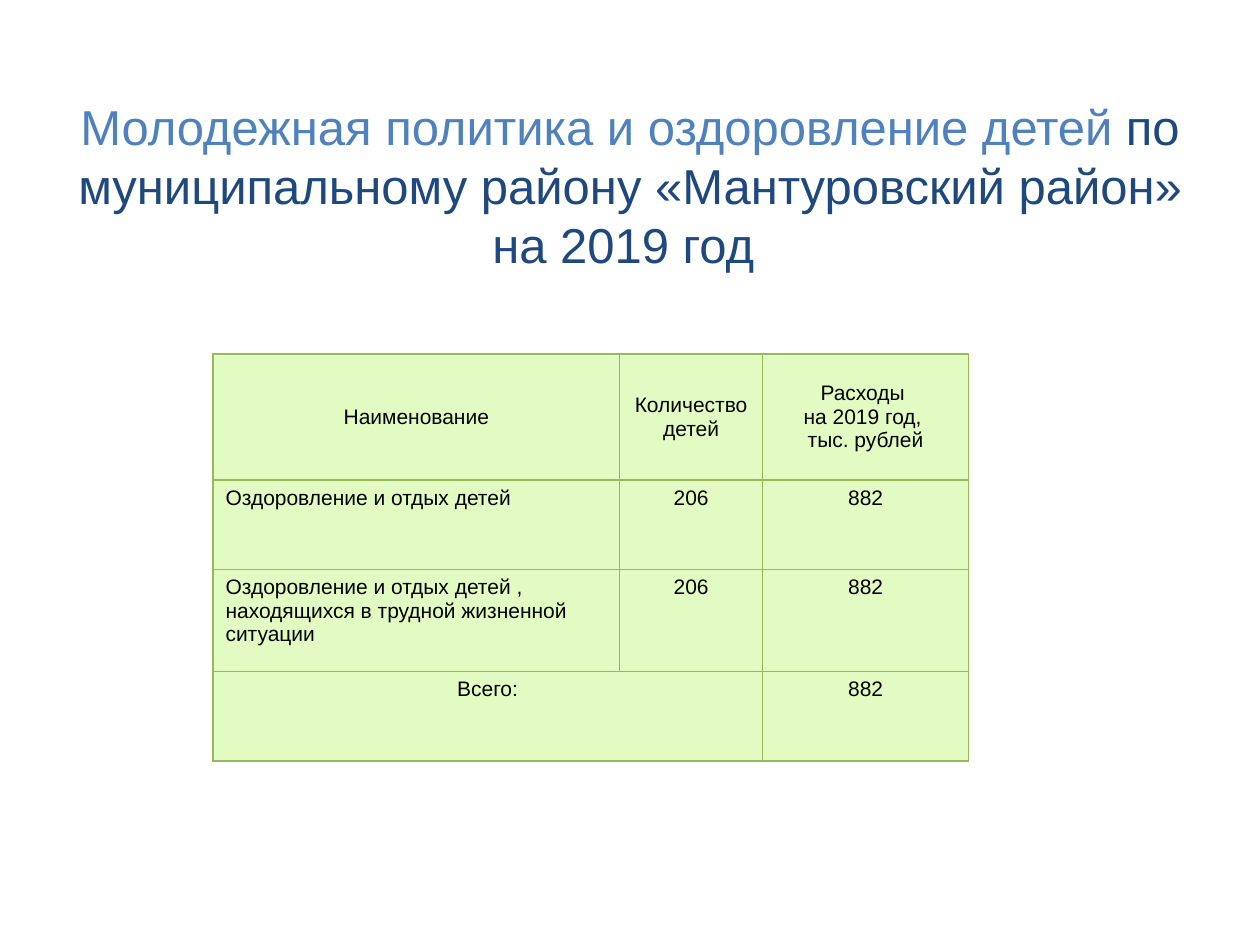
from dataclasses import dataclass

from lxml.etree import SubElement
from pptx import Presentation
from pptx.dml.color import RGBColor as Color
from pptx.enum.text import MSO_ANCHOR as Anchor, MSO_AUTO_SIZE as AutoSize, PP_ALIGN as Align
from pptx.oxml.ns import qn
from pptx.util import Inches, Pt


@dataclass(frozen=True)
class Theme:
    font: str = "Arial"
    title_size: int = 28
    table_size: int = 12
    accent: str = "4F81BD"
    dark: str = "1F497D"
    text: str = "000000"
    cell: str = "E2FBC2"
    border: str = "98B955"
    border_width: float = 0.75


THEME = Theme()

TITLE = [
    ("Молодежная политика и оздоровление детей ", THEME.accent),
    ("по муниципальному району «Мантуровский район» на 2019 год ", THEME.dark),
]
COLUMNS = [3.23, 1.13, 1.64]
ROWS = [1, 0.71, 0.81, 0.71]
# Each cell is a list of paragraphs
CELLS = [
    [["Наименование"], ["Количество детей"], ["Расходы ", "на 2019 год, ", "тыс. рублей"]],
    [["Оздоровление и отдых детей"], ["206"], ["882"]],
    [["Оздоровление и отдых детей , находящихся в трудной жизненной ситуации"], ["206"], ["882"]],
    [["Всего:"], [], ["882"]],
]


def add_span(para, text, size, color):
    span = para.add_run()
    span.text = text
    span.font.name = THEME.font
    span.font.size = Pt(size)
    span.font.color.rgb = Color.from_string(color)


def add_title(page):
    box = page.shapes.title
    box.left, box.top, box.width, box.height = map(Inches, (0.5, 0.84, 9, 1.25))
    frame = box.text_frame
    frame.word_wrap = True
    frame.auto_size = AutoSize.NONE
    frame.vertical_anchor = Anchor.MIDDLE
    para = frame.paragraphs[0]
    para.alignment = Align.CENTER
    for text, color in TITLE:
        add_span(para, text, THEME.title_size, color)


def set_borders(cell):
    # Border lines must come before the fill in the cell properties
    properties = cell._tc.get_or_add_tcPr()
    for side in ("a:lnL", "a:lnR", "a:lnT", "a:lnB"):
        line = SubElement(properties, qn(side), w=str(Pt(THEME.border_width)))
        fill = SubElement(line, qn("a:solidFill"))
        SubElement(fill, qn("a:srgbClr"), val=THEME.border)


def fill_cell(cell, lines, align, anchor):
    set_borders(cell)
    cell.fill.solid()
    cell.fill.fore_color.rgb = Color.from_string(THEME.cell)
    cell.vertical_anchor = anchor
    frame = cell.text_frame
    for index, text in enumerate(lines):
        para = frame.add_paragraph() if index else frame.paragraphs[0]
        para.alignment = align
        add_span(para, text, THEME.table_size, THEME.text)


def add_spending_table(page):
    frame = page.shapes.add_table(
        len(ROWS), len(COLUMNS), Inches(1.69), Inches(2.81),
        Inches(sum(COLUMNS)), Inches(sum(ROWS)))
    table = frame.table
    for column, width in zip(table.columns, COLUMNS):
        column.width = Inches(width)
    for row, height in zip(table.rows, ROWS):
        row.height = Inches(height)

    # The total label spans the first two columns
    total = len(ROWS) - 1
    table.cell(total, 0).merge(table.cell(total, 1))

    for r, row in enumerate(CELLS):
        for c, lines in enumerate(row):
            is_name = c == 0 and 0 < r < total
            align = Align.LEFT if is_name else Align.CENTER
            anchor = Anchor.TOP if r else Anchor.MIDDLE
            fill_cell(table.cell(r, c), lines, align, anchor)


def main():
    deck = Presentation()
    deck.slide_width, deck.slide_height = Inches(10), Inches(7.5)
    page = deck.slides.add_slide(deck.slide_layouts[5])
    add_title(page)
    add_spending_table(page)
    deck.save("out.pptx")


if __name__ == "__main__":
    main()
